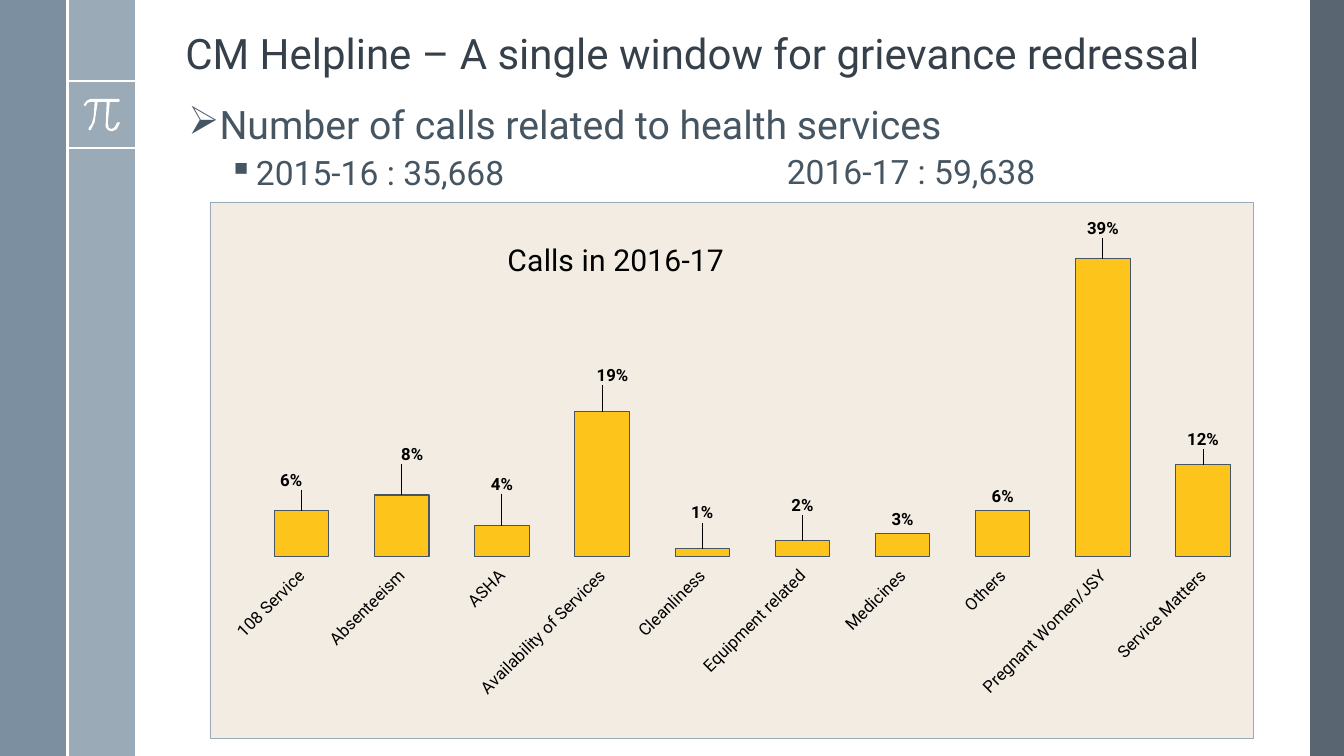
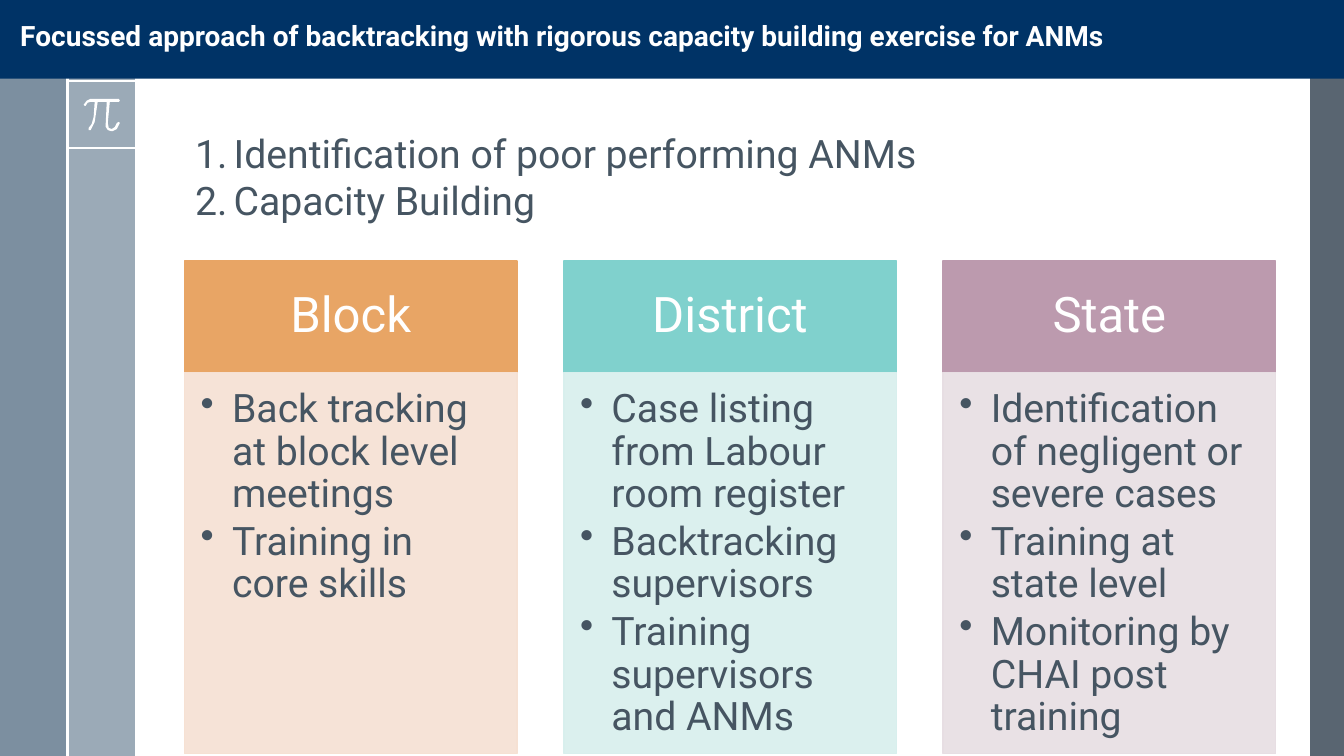
from dataclasses import dataclass

from pptx import Presentation
from pptx.chart.data import CategoryChartData
from pptx.dml.color import RGBColor
from pptx.enum.chart import XL_CHART_TYPE, XL_LABEL_POSITION, XL_TICK_LABEL_POSITION, XL_TICK_MARK
from pptx.enum.shapes import MSO_CONNECTOR, MSO_SHAPE
from pptx.enum.text import MSO_ANCHOR, MSO_AUTO_SIZE, PP_ALIGN
from pptx.oxml import parse_xml
from pptx.oxml.ns import nsdecls, qn
from pptx.util import Cm, Pt

COLUMNS = XL_CHART_TYPE.COLUMN_CLUSTERED
OUTSIDE_END = XL_LABEL_POSITION.OUTSIDE_END
LABELS_LOW = XL_TICK_LABEL_POSITION.LOW
NO_TICK = XL_TICK_MARK.NONE
STRAIGHT = MSO_CONNECTOR.STRAIGHT
RECTANGLE = MSO_SHAPE.RECTANGLE
TOP, MIDDLE, BOTTOM = MSO_ANCHOR.TOP, MSO_ANCHOR.MIDDLE, MSO_ANCHOR.BOTTOM
LEFT, CENTER = PP_ALIGN.LEFT, PP_ALIGN.CENTER
NO_FIT = MSO_AUTO_SIZE.NONE


@dataclass(frozen=True)
class Theme:
    font: str = "Roboto"
    white: str = "FFFFFF"
    black: str = "000000"
    title: str = "35404A"
    text: str = "465562"
    slate: str = "475562"
    steel: str = "6A8093"
    mist: str = "9BAAB7"
    navy: str = "003366"
    sand: str = "F2ECE2"
    amber: str = "FFC000"
    title_size: float = 30
    banner_size: float = 20
    heading_size: float = 35
    body_size: float = 28
    detail_size: float = 24
    chart_title_size: float = 21.5
    label_size: float = 12
    chart_size: float = 10


THEME = Theme()
SLIDE_WIDTH, SLIDE_HEIGHT = 33.87, 19.05
INSETS = (0.25, 0.13, 0.25, 0.13)

# left, width, colour, opacity in percent
BANDS = [
    (33.02, 0.85, THEME.slate, 90),
    (1.7, 1.7, THEME.mist, 100),
    (0, 1.7, THEME.steel, 88),
]
RULES = [(1.7, 2.05, 3.4, 2.05), (1.7, 3.74, 3.4, 3.74), (1.7, 0, 1.7, SLIDE_HEIGHT)]
# hundredths of an inch
PI_OUTLINE = [
    (118, 98), (90, 98), (86, 100), (83, 104), (84, 105), (85, 105), (87, 102), (90, 101),
    (94, 101), (93, 116), (91, 123), (88, 127), (88, 129), (90, 129), (94, 121), (97, 101),
    (106, 101), (105, 122), (105, 126), (107, 129), (110, 130), (112, 130), (116, 128),
    (119, 122), (118, 121), (116, 122), (114, 126), (111, 128), (108, 127), (107, 122),
    (109, 101), (118, 101), (119, 100),
]

HELPLINE_TITLE = "CM Helpline – A single window for grievance redressal"
CALLS_HEADING = "Number of calls related to health services"
CALLS_BY_YEAR = ["2015-16 : 35,668", "2016-17 : 59,638"]
CHART_TITLE = "Calls in 2016-17"
# category, share of calls, label shift as a fraction of the chart
CALLS = [
    ("108 Service", 0.06, (-0.01, -0.03)),
    ("Absenteeism", 0.08, (0.01, -0.05)),
    ("ASHA", 0.04, (0, -0.05)),
    ("Availability of Services", 0.19, (0.01, -0.04)),
    ("Cleanliness", 0.01, (0, -0.04)),
    ("Equipment related", 0.02, (0, -0.04)),
    ("Medicines", 0.03, None),
    ("Others", 0.06, None),
    ("Pregnant Women/JSY", 0.39, (0, -0.03)),
    ("Service Matters", 0.12, (0, -0.02)),
]

APPROACH_TITLE = "Focussed approach of backtracking with rigorous capacity building exercise for ANMs"
STEPS = ["Identification of poor performing ANMs", "Capacity Building"]
# heading, heading colour, panel colour, points
LEVELS = [
    ("Block", "E8A565", "F6E1D3",
     ["Back tracking at block level meetings", "Training in core skills"]),
    ("District", "80D1CD", "D8EFED",
     ["Case listing from Labour room register", "Backtracking supervisors",
      "Training supervisors and ANMs"]),
    ("State", "BC9AAE", "E7DEE3",
     ["Identification of negligent or severe cases", "Training at state level",
      "Monitoring by CHAI post training"]),
]


def rgb(colour):
    return RGBColor.from_string(colour)


def set_font(font, size, colour, bold=False):
    font.name, font.size, font.bold = THEME.font, Pt(size), bold
    font.color.rgb = rgb(colour)


def set_opacity(properties, percent):
    """Set the opacity of the solid fill held by a shape-properties element."""
    colour = properties.find(qn("a:solidFill")).find(qn("a:srgbClr"))
    colour.append(parse_xml(f'<a:alpha {nsdecls("a")} val="{percent * 1000}"/>'))


def set_bullet(para, bullet, margin, hanging):
    """Add a bullet character, or numbering when the bullet is '1.'."""
    properties = para._p.get_or_add_pPr()
    properties.set("marL", str(Cm(margin)))
    properties.set("indent", str(-Cm(hanging)))
    if bullet == "1.":
        kind = f'<a:buAutoNum {nsdecls("a")} type="arabicPeriod"/>'
    else:
        kind = f'<a:buChar {nsdecls("a")} char="{bullet}"/>'
    properties.append(parse_xml(kind))


def write(shape, lines, size=THEME.body_size, colour=THEME.text, bold=False, align=LEFT,
          anchor=TOP, insets=INSETS, bullet=None, margin=0, hanging=0, spacing=0.9,
          before=0, after=0, more=False):
    """Fill a shape with one paragraph per line; more=True continues its text."""
    frame = shape.text_frame
    frame.word_wrap, frame.auto_size, frame.vertical_anchor = True, NO_FIT, anchor
    (frame.margin_left, frame.margin_top,
     frame.margin_right, frame.margin_bottom) = (Cm(inset) for inset in insets)
    for index, line in enumerate(lines):
        para = frame.add_paragraph() if more or index else frame.paragraphs[0]
        para.alignment, para.line_spacing = align, spacing
        para.space_before = Pt(before if more or index else 0)
        para.space_after = Pt(after)
        if bullet:
            set_bullet(para, bullet, margin, hanging)
        span = para.add_run()
        span.text = line
        set_font(span.font, size, colour, bold)


def add_text(slide, place, lines, **style):
    box = slide.shapes.add_textbox(*map(Cm, place))
    write(box, lines, **style)
    return box


def add_panel(slide, place, colour, opacity=100, outlined=False):
    panel = slide.shapes.add_shape(RECTANGLE, *map(Cm, place))
    panel.shadow.inherit = False
    panel.fill.solid()
    panel.fill.fore_color.rgb = rgb(colour)
    if opacity < 100:
        set_opacity(panel.element.spPr, opacity)
    if outlined:
        panel.line.color.rgb = rgb(colour)
        panel.line.width = Pt(1)
    else:
        panel.line.fill.background()
    return panel


def add_rule(slide, ends):
    rule = slide.shapes.add_connector(STRAIGHT, *map(Cm, ends))
    rule.line.color.rgb = rgb(THEME.white)
    rule.line.width = Pt(1.5)
    rule.element.spPr.append(parse_xml(f'<a:effectLst {nsdecls("a")}/>'))
    return rule


def add_pi(slide):
    start, *others = PI_OUTLINE
    builder = slide.shapes.build_freeform(*start, scale=Cm(2.54) / 100)
    builder.add_line_segments(others, close=True)
    symbol = builder.convert_to_shape()
    symbol.shadow.inherit = False
    symbol.fill.solid()
    symbol.fill.fore_color.rgb = rgb(THEME.white)
    symbol.line.fill.background()
    return symbol


def decorate_layout(layout, slide):
    """Draw the shared side bands on a slide, then move them to its layout."""
    parts = [add_panel(slide, (left, 0, width, SLIDE_HEIGHT), colour, opacity)
             for left, width, colour, opacity in BANDS]
    parts += [add_rule(slide, ends) for ends in RULES]
    parts.append(add_pi(slide))
    for part in parts:
        layout.shapes.element.append(part.element)


def set_title(slide, place, text, **style):
    title = slide.shapes.title
    title.left, title.top, title.width, title.height = map(Cm, place)
    write(title, [text], **style)
    return title


def chart_part(chart, tag):
    """Return the first XML element of the chart with this tag."""
    return next(chart.element.iter(qn(tag)))


def set_layout(parent, position, **values):
    """Place a chart part by hand; position is the layout's index in its parent."""
    for old in parent.findall(qn("c:layout")):
        parent.remove(old)
    settings = "".join(f'<c:{name} val="{value}"/>' for name, value in values.items())
    parent.insert(position, parse_xml(
        f'<c:layout {nsdecls("c")}><c:manualLayout>{settings}</c:manualLayout></c:layout>'))


def style_axes(chart):
    values = chart.value_axis
    values.minimum_scale, values.maximum_scale = 0, 0.45
    values.has_major_gridlines = False
    values.visible = False
    categories = chart.category_axis
    categories.major_tick_mark = categories.minor_tick_mark = NO_TICK
    categories.tick_label_position = LABELS_LOW
    categories.format.line.fill.background()
    set_font(categories.tick_labels.font, THEME.label_size, THEME.black)
    label_text = chart_part(chart, "c:catAx").find(qn("c:txPr"))
    label_text.find(qn("a:bodyPr")).set("rot", "-2700000")


def style_columns(chart):
    plot = chart.plots[0]
    plot.gap_width, plot.vary_by_categories = 84, False
    series = plot.series[0]
    series.format.fill.solid()
    series.format.fill.fore_color.rgb = rgb(THEME.amber)
    series.format.line.color.rgb = rgb(THEME.slate)
    series.format.line.width = Pt(0.75)
    column = chart_part(chart, "c:ser")
    set_opacity(column.find(qn("c:spPr")), 88)
    labels = series.data_labels
    labels.show_value, labels.position = True, OUTSIDE_END
    labels.number_format, labels.number_format_is_linked = "0%", False
    set_font(labels.font, THEME.label_size, THEME.black, bold=True)
    shifts = [(index, shift) for index, (_, _, shift) in enumerate(CALLS) if shift]
    for index, _ in shifts:
        label = series.points[index].data_label
        set_font(label.font, THEME.label_size, THEME.black, bold=True)
        label.position = OUTSIDE_END
    for (_, (right, down)), label in zip(shifts, column.iter(qn("c:dLbl"))):
        set_layout(label, 1, x=right, y=down)


def add_calls_chart(slide, place):
    data = CategoryChartData(number_format="0%")
    data.categories = [name for name, _, _ in CALLS]
    data.add_series("Series 1", [share for _, share, _ in CALLS])
    chart = slide.shapes.add_chart(COLUMNS, *map(Cm, place), data).chart
    chart.has_legend = False
    set_font(chart.font, THEME.chart_size, THEME.text)
    chart.has_title = True
    para = chart.chart_title.text_frame.paragraphs[0]
    span = para.add_run()
    span.text = CHART_TITLE
    set_font(span.font, THEME.chart_title_size, THEME.black)
    set_layout(chart_part(chart, "c:title"), 1, xMode="edge", yMode="edge", x=0.28, y=0.06)
    style_axes(chart)
    style_columns(chart)
    set_layout(chart_part(chart, "c:plotArea"), 0, layoutTarget="inner",
               xMode="edge", yMode="edge", x=0.04, y=0.02, w=0.96, h=0.64)
    chart_part(chart, "c:chart").addnext(parse_xml(
        f'<c:spPr {nsdecls("c", "a")}>'
        f'<a:solidFill><a:srgbClr val="{THEME.sand}"/></a:solidFill>'
        f'<a:ln w="{Pt(0.5)}"><a:solidFill><a:srgbClr val="{THEME.mist}"/></a:solidFill></a:ln>'
        '</c:spPr>'))


def build_helpline(slide):
    set_title(slide, (4.42, 0.46, 27.18, 1.65), HELPLINE_TITLE,
              size=THEME.title_size, colour=THEME.title, anchor=BOTTOM)
    first_year, second_year = CALLS_BY_YEAR
    box = add_text(slide, (4.5, 2.54, 27.18, 2.5), [CALLS_HEADING],
                   bullet="➢", margin=0.69, hanging=0.69)
    write(box, [first_year], size=THEME.detail_size, bullet="▪", margin=1.7, hanging=0.69,
          before=6, more=True)
    add_text(slide, (19.58, 3.78, 8, 1.25), [second_year], size=THEME.detail_size)
    add_calls_chart(slide, (5.28, 5.08, 26.31, 13.54))


def build_approach(slide):
    banner = set_title(slide, (0, 0, SLIDE_WIDTH, 1.98), APPROACH_TITLE,
                       size=THEME.banner_size, colour=THEME.white, bold=True,
                       anchor=MIDDLE, insets=(0.51, 0.13, 0, 0.33), spacing=1)
    banner.fill.solid()
    banner.fill.fore_color.rgb = rgb(THEME.navy)
    add_text(slide, (4.67, 3.12, 24.97, 3.43), STEPS,
             bullet="1.", margin=0.97, hanging=0.97, spacing=1)
    left, pitch, width = 4.65, 9.56, 8.38
    for index, (heading, strong, pale, points) in enumerate(LEVELS):
        x = left + index * pitch
        header = add_panel(slide, (x, 6.58, width, 2.81), strong, outlined=True)
        write(header, [heading], size=THEME.heading_size, colour=THEME.white,
              align=CENTER, anchor=MIDDLE)
        panel = add_panel(slide, (x, 9.39, width, 9.6), pale, opacity=90, outlined=True)
        write(panel, points, insets=(0.41, 0.41, 0.56, 0.61),
              bullet="•", margin=0.79, hanging=0.79, after=4)


def main():
    deck = Presentation()
    deck.slide_width, deck.slide_height = Cm(SLIDE_WIDTH), Cm(SLIDE_HEIGHT)
    layout = deck.slide_layouts[5]
    helpline, approach = (deck.slides.add_slide(layout) for _ in range(2))
    decorate_layout(layout, helpline)
    build_helpline(helpline)
    build_approach(approach)
    deck.save("out.pptx")


if __name__ == "__main__":
    main()
